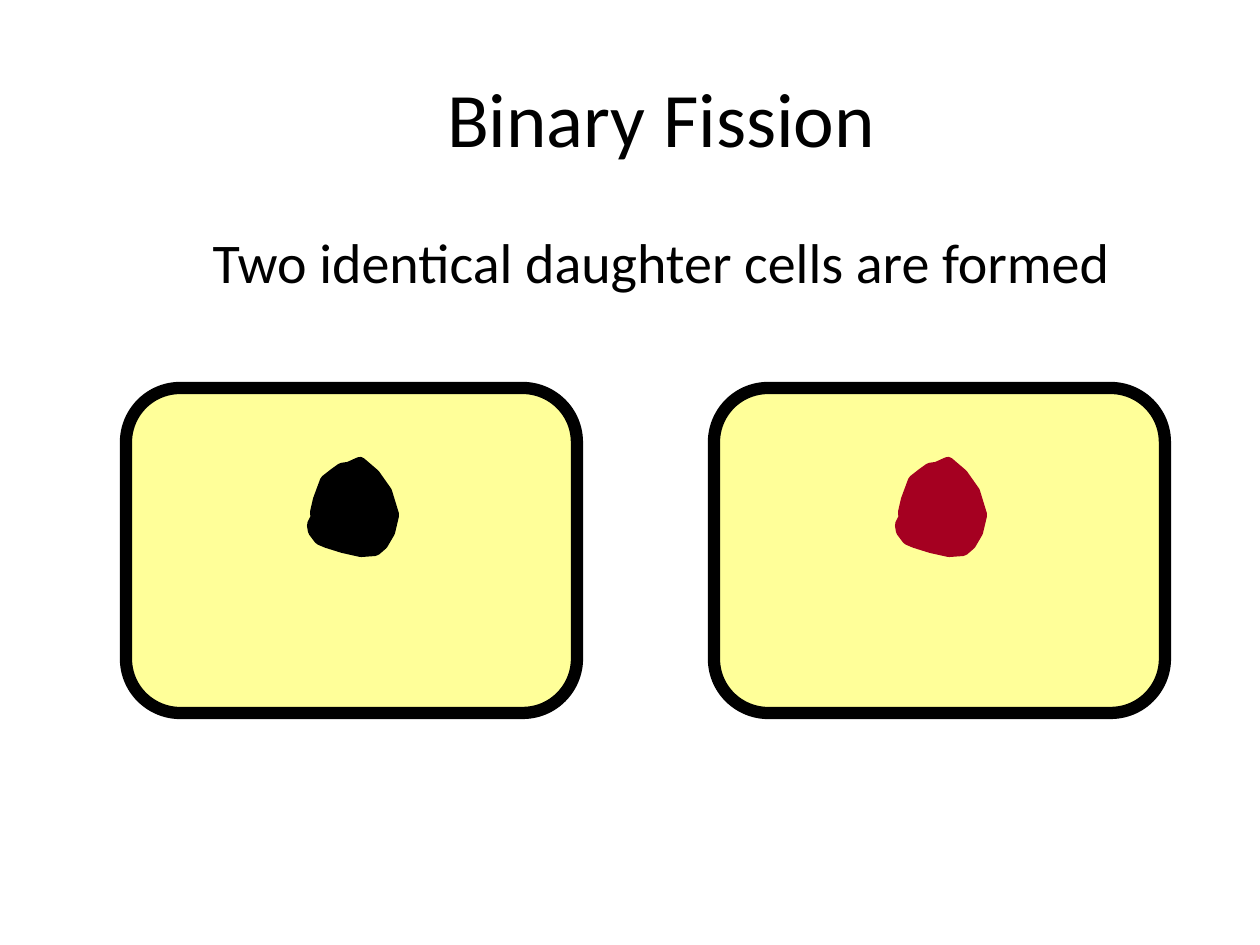
from pptx import Presentation
from pptx.dml.color import RGBColor
from pptx.enum.shapes import MSO_SHAPE
from pptx.enum.text import MSO_ANCHOR, PP_ALIGN
from pptx.util import Emu, Pt

PX = 914400 / 126
CELL_W, CELL_H = 451, 325
CELL_TOP = 388
CELL_STEP = 588

# Outline of the genetic material, measured from the cell's top-left corner
DNA_OUTLINE = [
    (234, 75), (248, 87), (260, 104), (267, 127), (263, 144),
    (256, 156), (249, 162), (235, 163), (217, 159), (201, 154),
    (194, 151), (188, 143), (187, 137), (191, 129), (190, 125),
    (193, 112), (200, 93), (209, 86), (216, 81), (223, 80),
]


def px(length):
    return Emu(round(length * PX))


def color(hex_code):
    return RGBColor.from_string(hex_code)


def write(frame, text, size=32, font="Calibri", ink="000000",
          align=PP_ALIGN.CENTER, anchor=MSO_ANCHOR.TOP):
    frame.word_wrap = True
    frame.vertical_anchor = anchor
    paragraph = frame.paragraphs[0]
    paragraph.alignment = align
    run = paragraph.add_run()
    run.text = text
    run.font.name = font
    run.font.size = Pt(size)
    run.font.color.rgb = color(ink)


class SlideBuilder:
    membrane = "000000"
    cytoplasm = "FFFF99"
    line_width = 7

    def __init__(self, slide):
        self.slide = slide

    def paint(self, shape, fill, line):
        shape.shadow.inherit = False
        shape.fill.solid()
        shape.fill.fore_color.rgb = color(fill)
        shape.line.color.rgb = color(line)
        shape.line.width = Pt(self.line_width)

    def text(self, left, top, width, height, content, **style):
        box = self.slide.shapes.add_textbox(
            px(left), px(top), px(width), px(height))
        write(box.text_frame, content, **style)

    def cell(self, left, top):
        body = self.slide.shapes.add_shape(
            MSO_SHAPE.ROUNDED_RECTANGLE,
            px(left), px(top), px(CELL_W), px(CELL_H))
        body.adjustments[0] = 0.167
        self.paint(body, self.cytoplasm, self.membrane)

    def dna(self, left, top, ink):
        start, *rest = [(left + x, top + y) for x, y in DNA_OUTLINE]
        outline = self.slide.shapes.build_freeform(*start, scale=PX)
        outline.add_line_segments(rest, close=True)
        self.paint(outline.convert_to_shape(), ink, ink)


def main():
    deck = Presentation()
    deck.slide_width, deck.slide_height = px(1260), px(945)
    builder = SlideBuilder(deck.slides.add_slide(deck.slide_layouts[6]))

    # Daughter cells, each with its genetic material
    for index, dna_color in enumerate(["000000", "A50021"]):
        left = 126 + index * CELL_STEP
        builder.cell(left, CELL_TOP)
        builder.dna(left, CELL_TOP, dna_color)

    # Title and statement
    builder.text(126, 38, 1071, 158, "Binary Fission",
                 size=44, anchor=MSO_ANCHOR.MIDDLE)
    builder.text(126, 221, 1071, 301, "Two identical daughter cells are formed")

    deck.save("out.pptx")


if __name__ == "__main__":
    main()
